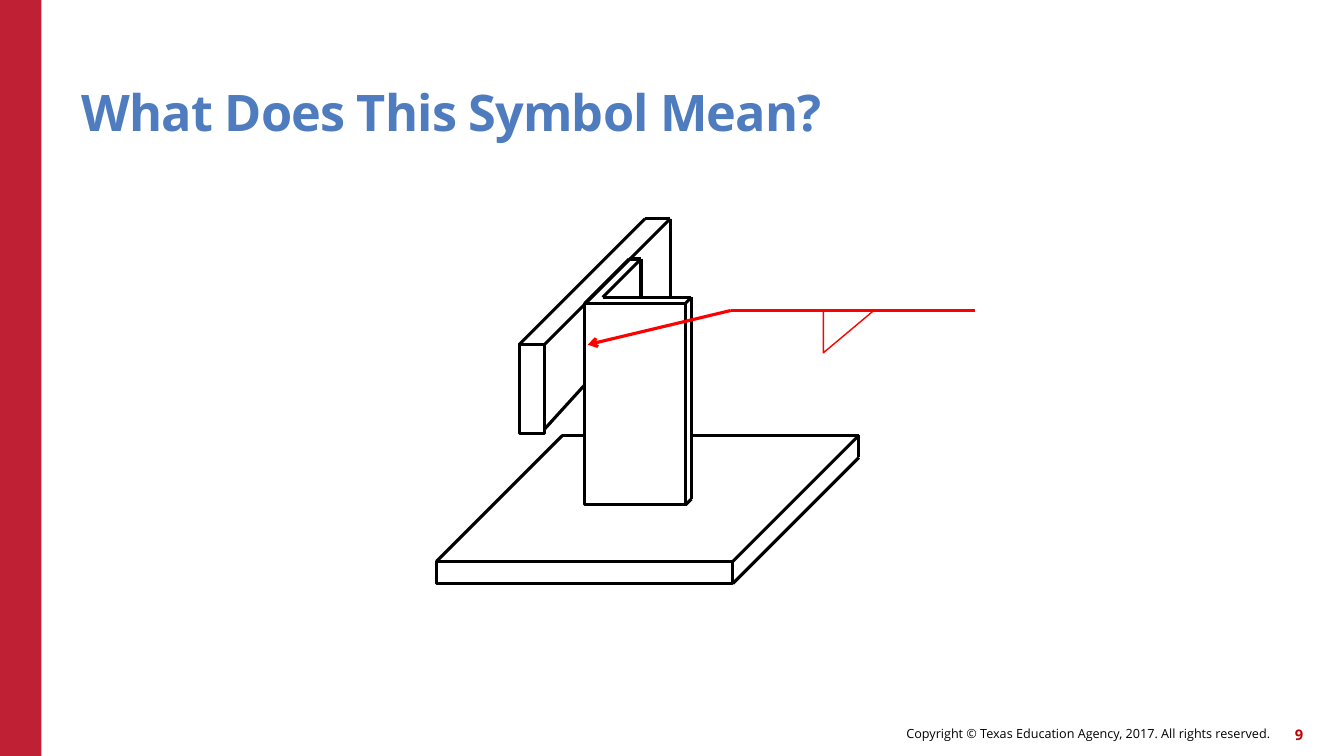
from pptx import Presentation
from pptx.dml.color import RGBColor
from pptx.enum.shapes import MSO_CONNECTOR, MSO_SHAPE
from pptx.enum.text import MSO_ANCHOR, MSO_AUTO_SIZE, PP_ALIGN
from pptx.oxml.ns import qn
from pptx.util import Pt
from lxml import etree

LINE = MSO_CONNECTOR.STRAIGHT
RECT, TRI = MSO_SHAPE.RECTANGLE, MSO_SHAPE.RIGHT_TRIANGLE
LEFT, RIGHT = PP_ALIGN.LEFT, PP_ALIGN.RIGHT
BOTTOM, MIDDLE = MSO_ANCHOR.BOTTOM, MSO_ANCHOR.MIDDLE
NONE = MSO_AUTO_SIZE.NONE
FONT, BLACK, RED = "Open Sans", "000000", "FF0000"

TITLE = ("What Does This Symbol Mean?", (58.3, 32.4, 792, 69.1), 36, "4E7CBE", True, LEFT, BOTTOM)
NOTES = [
    ("Copyright © Texas Education Agency, 2017. All rights reserved.",
     (442.1, 512.6, 465.1, 23), 9, BLACK, False, RIGHT, MIDDLE),
    ("9", (900.7, 513.4, 30.2, 23), 10.5, "C00000", True, RIGHT, MIDDLE),
]
BAR = (0, 0, 29.5, 540)
BASE = (311.8, 401, 211.7, 15.8)
POST = (417.6, 216.7, 72, 144)
BEAM = (370.8, 246.2, 18, 63.4)
DEEP, THIN = 90, 4.3
RIB_TOP, RIB_L, RIB_R = 185, 449.3, 457.9
FLAG = (588.2, 221.8, 36, 30.2)
BEND, END, TIP = (522, 221.8), (696.2, 221.8), (419.8, 246.2)


def rgb(code):
    return RGBColor.from_string(code)


def write(box, text, area, size, color, bold, align, anchor):
    box.left, box.top, box.width, box.height = map(Pt, area)
    frame = box.text_frame
    frame.word_wrap, frame.auto_size = True, NONE
    frame.vertical_anchor = anchor
    frame.margin_left = frame.margin_right = frame.margin_top = frame.margin_bottom = 0
    para = frame.paragraphs[0]
    para.text, para.alignment = text, align
    font = para.font
    font.name, font.size, font.bold = FONT, Pt(size), bold
    font.color.rgb = rgb(color)
    return para


def draw(host, kind, area, color, width):
    shape = host.add_shape(kind, *map(Pt, area))
    shape.shadow.inherit = False
    shape.fill.background()
    shape.line.color.rgb, shape.line.width = rgb(color), Pt(width)
    return shape


def trace(host, color, *points):
    for start, end in zip(points, points[1:]):
        line = host.add_connector(LINE, *map(Pt, start + end))
        line.line.color.rgb, line.line.width = rgb(color), Pt(2.25)
        etree.SubElement(line._element.spPr, qn("a:effectLst"))
    return line


def edges(area):
    x, y, w, h = area
    return x, y, x + w, y + h


def main():
    deck = Presentation()
    deck.slide_width, deck.slide_height = Pt(960), Pt(540)
    slide = deck.slides.add_slide(deck.slide_layouts[5])
    shapes = slide.shapes

    bar = shapes.add_shape(RECT, *map(Pt, BAR))
    bar.shadow.inherit = False
    bar.fill.solid()
    bar.fill.fore_color.rgb = rgb("C02033")
    bar.line.fill.background()

    for note in NOTES:
        write(shapes.add_textbox(0, 0, 0, 0), *note)
    head = write(shapes.title, *TITLE)
    head.line_spacing = 0.9
    head.runs[0]._r.get_or_add_rPr().set("spc", "-60")

    joint = shapes.add_group_shape().shapes
    for part in (BASE, POST, BEAM):
        draw(joint, RECT, part, BLACK, 2.25)

    left, top, right, low = edges(POST)
    back, rear = right + THIN, top - THIN
    nook = RIB_R - (rear - RIB_TOP)
    trace(joint, BLACK, (right, top), (back, rear), (back, low - THIN), (right, low))
    trace(joint, BLACK, (left, top), (RIB_L, RIB_TOP), (RIB_R, RIB_TOP), (RIB_R, rear))
    trace(joint, BLACK, (RIB_R, RIB_TOP), (nook, rear), (back, rear))

    x, y, far, foot = edges(BASE)
    edge = y - DEEP
    trace(joint, BLACK, (x, y), (x + DEEP, edge), (left, edge))
    trace(joint, BLACK, (back, edge), (far + DEEP, edge), (far + DEEP, foot - DEEP), (far, foot))
    trace(joint, BLACK, (far, y), (far + DEEP, edge))

    x, y, far, foot = edges(BEAM)
    edge = y - DEEP
    trace(joint, BLACK, (x, y), (x + DEEP, edge), (far + DEEP, edge), (far + DEEP, rear))
    trace(joint, BLACK, (far, y), (far + DEEP, edge))
    trace(joint, BLACK, (far, foot - 2.9), (left, 275))

    trace(shapes, RED, BEND, END)
    arrow = trace(shapes, RED, BEND, TIP)
    etree.SubElement(arrow.line._get_or_add_ln(), qn("a:tailEnd"), type="arrow")
    flag = draw(shapes, TRI, FLAG, RED, 1)
    flag._element.spPr.find(qn("a:xfrm")).set("flipV", "1")

    deck.save("out.pptx")


if __name__ == "__main__":
    main()
